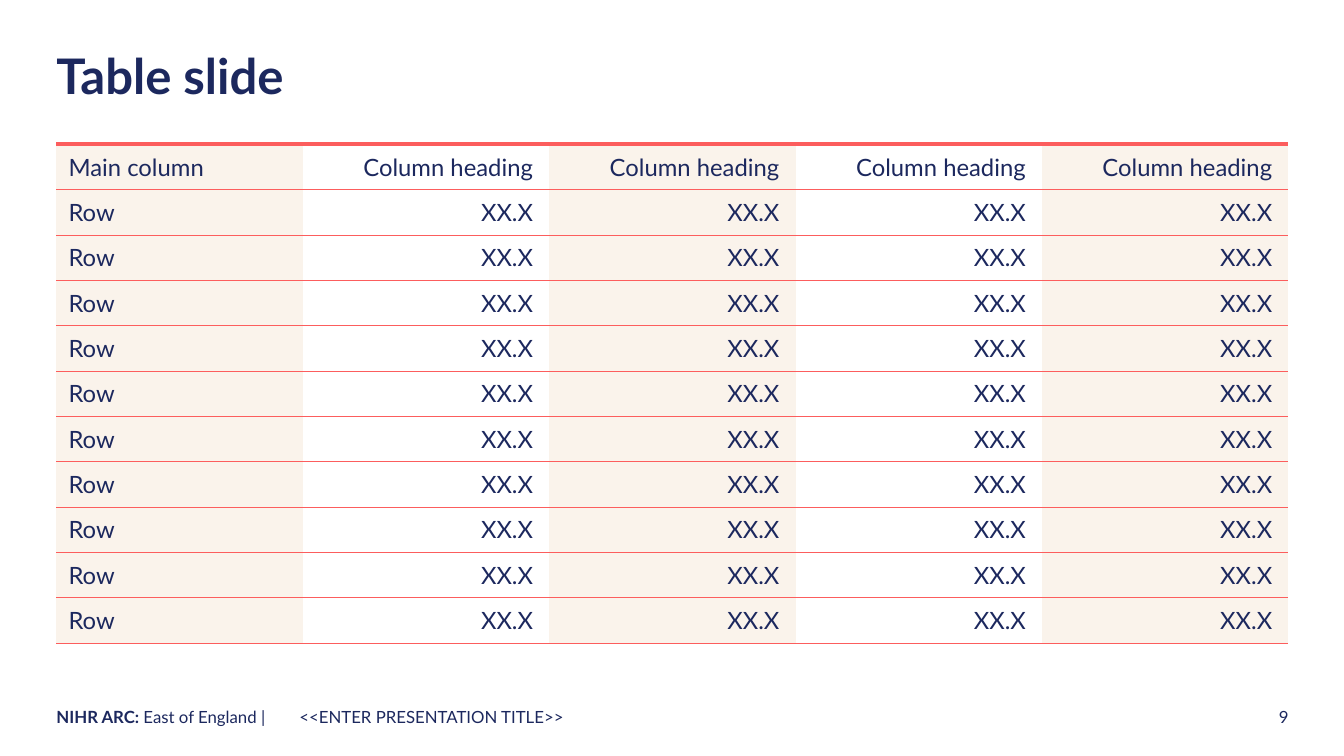
from lxml import etree
from pptx import Presentation
from pptx.dml.color import RGBColor
from pptx.enum.text import MSO_ANCHOR, MSO_AUTO_SIZE, PP_ALIGN
from pptx.oxml.ns import qn
from pptx.util import Inches, Pt

LEFT, RIGHT = PP_ALIGN.LEFT, PP_ALIGN.RIGHT
TOP, MIDDLE = MSO_ANCHOR.TOP, MSO_ANCHOR.MIDDLE

TITLE = "Table slide"
HEADINGS = ["Main column"] + ["Column heading"] * 4
ROWS = [HEADINGS] + [["Row"] + ["XX.X"] * 4] * 10
FOOTERS = [  # left, width, alignment, (text, bold) spans
    (0.56, 4.35, LEFT, [("NIHR ARC: ", True), ("East of England |", False)]),
    (11.8, 0.98, RIGHT, [("9", False)]),
    (2.97, 4.54, LEFT, [("<<ENTER PRESENTATION TITLE>>", False)]),
]

COLOURS = {"navy": "1C285E", "coral": "FC5D5D", "cream": "FAF3EB", "white": "FFFFFF"}
FONT = "Lato"
SLIDE_WIDTH, SLIDE_HEIGHT = 13.33, 7.5
MARGIN = 0.56
TABLE_TOP, TABLE_WIDTH, ROW_HEIGHT = 1.43, 12.22, 0.45
FOOTER_TOP, FOOTER_HEIGHT = 7.01, 0.2
THICK, THIN = 3, 0.5
PLAIN_TABLE_STYLE = "{2D5ABB26-0587-4C30-8999-92F81FD0307C}"
FRAME = {"margin_left": 0, "margin_right": 0, "margin_top": 0, "margin_bottom": 0,
         "word_wrap": True, "auto_size": MSO_AUTO_SIZE.NONE, "vertical_anchor": TOP}
CELL = {"margin_left": Inches(0.12), "margin_right": Inches(0.16),
        "margin_top": Inches(0.08), "margin_bottom": Inches(0.08),
        "vertical_anchor": MIDDLE}


def apply(target, values):
    for name, value in values.items():
        setattr(target, name, value)


def write(para, spans, size, align):
    """Fill a paragraph with (text, bold) spans in the slide's font."""
    para.alignment = align
    for text, bold in spans:
        span = para.add_run()
        span.text = text
        apply(span.font, {"name": FONT, "size": Pt(size), "bold": bold})
        span.font.color.rgb = RGBColor.from_string(COLOURS["navy"])


def set_borders(cell, top, bottom):
    """Draw coral rules above and below a cell and none at its sides."""
    properties = cell._tc.get_or_add_tcPr()
    widths = {"a:lnL": 0, "a:lnR": 0, "a:lnT": top, "a:lnB": bottom}
    for place, (tag, width) in enumerate(widths.items()):
        line = etree.Element(qn(tag), w=str(Pt(width)))
        if width:
            fill = etree.SubElement(line, qn("a:solidFill"))
            etree.SubElement(fill, qn("a:srgbClr"), val=COLOURS["coral"])
        else:
            etree.SubElement(line, qn("a:noFill"))
        properties.insert(place, line)


def add_title(page):
    title = page.shapes.title
    apply(title, {"left": Inches(MARGIN), "top": Inches(0.52),
                  "width": Inches(11.83), "height": Inches(0.67)})
    apply(title.text_frame, FRAME)
    para = title.text_frame.paragraphs[0]
    para.line_spacing = 0.9
    write(para, [(TITLE, True)], 35, LEFT)


def add_data_table(page):
    table = page.shapes.add_table(
        len(ROWS), len(HEADINGS), Inches(MARGIN), Inches(TABLE_TOP),
        Inches(TABLE_WIDTH), Inches(ROW_HEIGHT * len(ROWS))).table
    apply(table, {"first_row": False, "horz_banding": False})
    table._tbl.tblPr.find(qn("a:tableStyleId")).text = PLAIN_TABLE_STYLE
    for column in table.columns:
        column.width = Inches(TABLE_WIDTH / len(HEADINGS))
    for r, values in enumerate(ROWS):
        table.rows[r].height = Inches(ROW_HEIGHT)
        for c, text in enumerate(values):
            cell = table.cell(r, c)
            apply(cell, CELL)
            cell.fill.solid()
            shade = "white" if c % 2 else "cream"
            cell.fill.fore_color.rgb = RGBColor.from_string(COLOURS[shade])
            set_borders(cell, THIN if r else THICK, THIN)
            write(cell.text_frame.paragraphs[0], [(text, False)], 17,
                  RIGHT if c else LEFT)


def add_footers(page):
    for left, width, align, spans in FOOTERS:
        box = page.shapes.add_textbox(Inches(left), Inches(FOOTER_TOP),
                                      Inches(width), Inches(FOOTER_HEIGHT))
        apply(box.text_frame, FRAME)
        write(box.text_frame.paragraphs[0], spans, 12, align)


def main():
    deck = Presentation()
    apply(deck, {"slide_width": Inches(SLIDE_WIDTH), "slide_height": Inches(SLIDE_HEIGHT)})
    page = deck.slides.add_slide(deck.slide_layouts.get_by_name("Title Only"))
    add_title(page)
    add_data_table(page)
    add_footers(page)
    deck.save("out.pptx")


if __name__ == "__main__":
    main()
